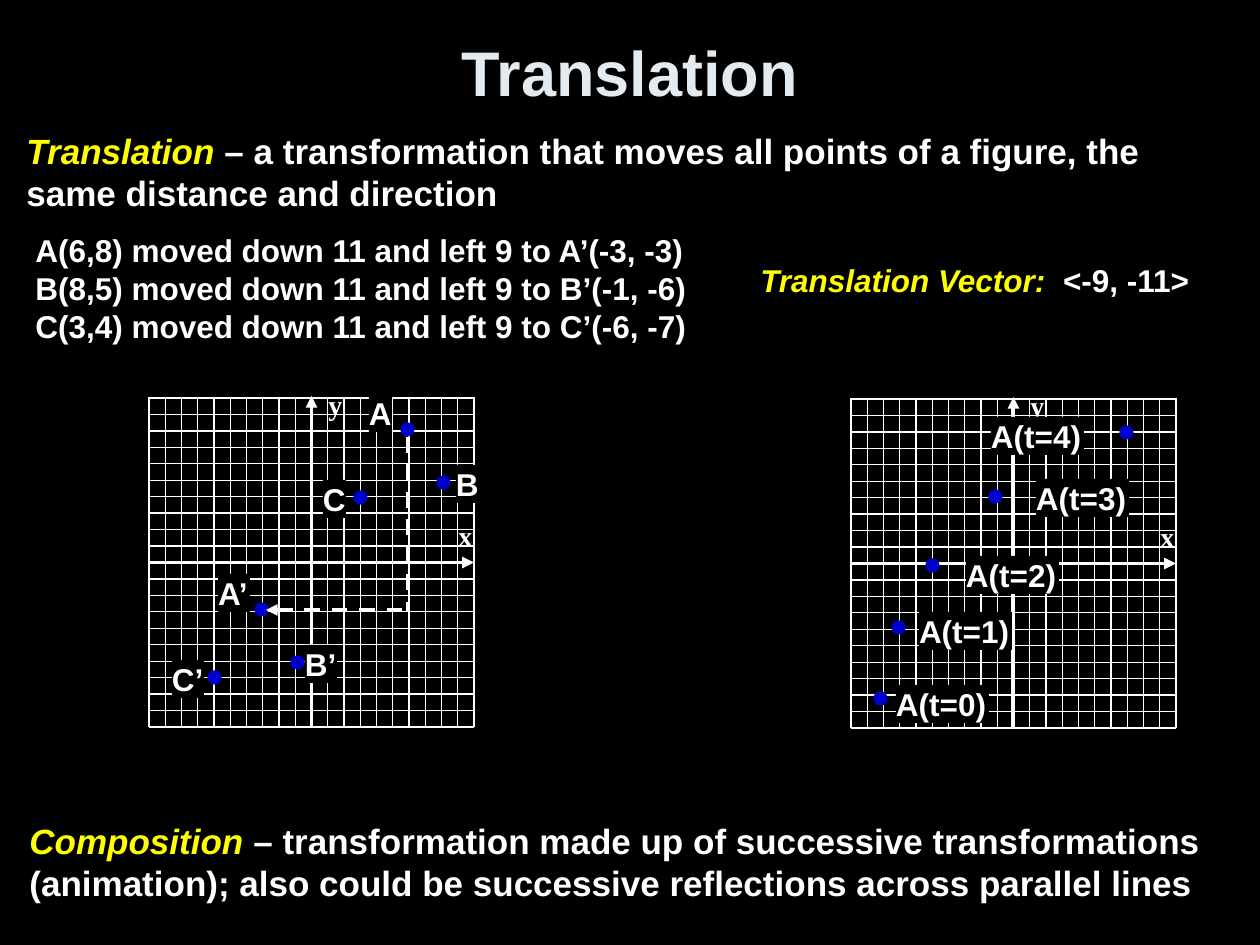
from lxml.etree import SubElement
from pptx import Presentation
from pptx.dml.color import RGBColor
from pptx.enum.dml import MSO_LINE as Dash
from pptx.enum.shapes import MSO_CONNECTOR as Link, MSO_SHAPE as Shape
from pptx.enum.text import MSO_ANCHOR as Anchor, MSO_AUTO_SIZE as Fit, PP_ALIGN as Align
from pptx.oxml.ns import qn
from pptx.util import Pt

BLACK = RGBColor(0x00, 0x00, 0x00)
WHITE = RGBColor(0xFF, 0xFF, 0xFF)
YELLOW = RGBColor(0xFF, 0xFF, 0x00)
BLUE = RGBColor(0x00, 0x00, 0xCC)
PALE = RGBColor(0xE3, 0xEB, 0xF1)
SCALE = 914400 // 126

TITLE = "Translation"
TERMS = [
    ((14, 123, 1230, 97), 20, "Translation",
     " – a transformation that moves all points of a figure, the same distance and direction"),
    ((17, 813, 1223, 97), 20, "Composition",
     " – transformation made up of successive transformations (animation); "
     "also could be successive reflections across parallel lines"),
    ((748, 255, 457, 50), 18, "Translation Vector:  ", "<-9, -11>"),
]
MOVES = [
    "A(6,8) moved down 11 and left 9 to A’(-3, -3)",
    "B(8,5) moved down 11 and left 9 to B’(-1, -6)",
    "C(3,4) moved down 11 and left 9 to C’(-6, -7)",
]
POINTS = [
    ("A", (401, 423), (369, 394)),
    ("B", (437, 476), (456, 465)),
    ("C", (354, 491), (323, 480)),
]
DOT_MOVE, TAG_MOVE = (-146, 180), (-151, 180)
STEPS = [
    ("A(t=0)", (874, 692), (896, 685)),
    ("A(t=1)", (892, 621), (919, 612)),
    ("A(t=2)", (926, 559), (966, 556)),
    ("A(t=3)", (989, 490), (1036, 479)),
    ("A(t=4)", (1120, 426), (991, 417)),
]
GRIDS = [(149, 398), (851, 399)]
CELLS, WIDE, HIGH, DOT = 20, 325, 329, 13


def px(*vals):
    return [round(v * SCALE) for v in vals]


def style(run, size, color=WHITE, italic=False, face="Arial"):
    font = run.font
    font.name, font.size, font.bold, font.italic = face, Pt(size), True, italic
    font.color.rgb = color


def write(box, lines, size, face="Arial", wrap=False):
    frame = box.text_frame
    frame.text = "\n".join(lines)
    frame.word_wrap = wrap
    frame.auto_size = Fit.SHAPE_TO_FIT_TEXT
    for para in frame.paragraphs:
        para.alignment = Align.LEFT
        for run in para.runs:
            style(run, size, face=face)
    return frame


def line(home, x1, y1, x2, y2, width=0.75, end=None, dash=None):
    link = home.add_connector(Link.STRAIGHT, *px(x1, y1, x2, y2))
    link.line.color.rgb = WHITE
    link.line.width = Pt(width)
    if dash:
        link.line.dash_style = dash
    if end:
        SubElement(link.line._get_or_add_ln(), qn(f"a:{end}"), type="triangle")
    SubElement(link._element.spPr, qn("a:effectLst"))


def grid(home, left, top):
    right, base = left + WIDE, top + HIGH
    for i in range(CELLS + 1):
        y = top + i * HIGH / CELLS
        x = left + i * WIDE / CELLS
        line(home, left, y, right, y)
        line(home, x, top - 1, x, base)
    midx, midy = left + WIDE / 2, top + HIGH / 2
    line(home, midx, base, midx, top - 2, 2.25, "tailEnd")
    line(home, left, midy, right, midy, 2.25, "tailEnd")
    for name, x, y in (("y", left + 167, top - 17), ("x", left + 297, top + 114)):
        write(home.add_textbox(*px(x, y, 39, 47)), [name], 16, "Times New Roman")


def dot(home, spot):
    mark = home.add_shape(Shape.OVAL, *px(*spot, DOT, DOT))
    mark.shadow.inherit = False
    mark.fill.solid()
    mark.fill.fore_color.rgb = BLUE
    mark.line.color.rgb = BLUE
    mark.line.width = Pt(0.75)


def tag(home, text, spot, width):
    box = home.add_shape(Shape.RECTANGLE, *px(*spot, width, 38))
    box.shadow.inherit = False
    box.fill.solid()
    box.fill.fore_color.rgb = BLACK
    box.line.fill.background()
    frame = write(box, [text], 18)
    frame.vertical_anchor = Anchor.MIDDLE
    frame.margin_left = frame.margin_right = 0
    frame.margin_top = frame.margin_bottom = 0


def shift(spot, move):
    return spot[0] + move[0], spot[1] + move[1]


def main():
    deck = Presentation()
    deck.slide_width, deck.slide_height = px(1260, 945)
    slide = deck.slides.add_slide(deck.slide_layouts[5])
    slide.background.fill.solid()
    slide.background.fill.fore_color.rgb = BLACK
    home = slide.shapes

    head = home.title
    head.left, head.top, head.width, head.height = px(63, 21, 1134, 100)
    head.text_frame.text = TITLE
    head.text_frame.vertical_anchor = Anchor.MIDDLE
    para = head.text_frame.paragraphs[0]
    para.alignment = Align.CENTER
    style(para.runs[0], 36, PALE)

    for area, size, term, rest in TERMS:
        frame = write(home.add_textbox(*px(*area)), [term], size, wrap=size == 20)
        para = frame.paragraphs[0]
        style(para.runs[0], size, YELLOW, True)
        run = para.add_run()
        run.text = rest
        style(run, size)
    write(home.add_textbox(*px(23, 225, 683, 127)), MOVES, 18)

    for left, top in GRIDS:
        grid(home.add_group_shape().shapes, left, top)

    images = [(name + "’", shift(spot, DOT_MOVE), shift(place, TAG_MOVE))
              for name, spot, place in POINTS]
    for marks, width in ((POINTS, 23), (images, 32)):
        group = home.add_group_shape().shapes
        for name, spot, place in marks:
            dot(group, spot)
            tag(home, name, place, width)
    line(home, 408, 437, 408, 612, 2.25, dash=Dash.DASH)
    line(home, 266, 610, 410, 610, 2.25, "headEnd", Dash.DASH)

    for name, spot, place in STEPS:
        dot(home, spot)
        tag(home, name, place, 93)

    deck.save("out.pptx")


if __name__ == "__main__":
    main()
